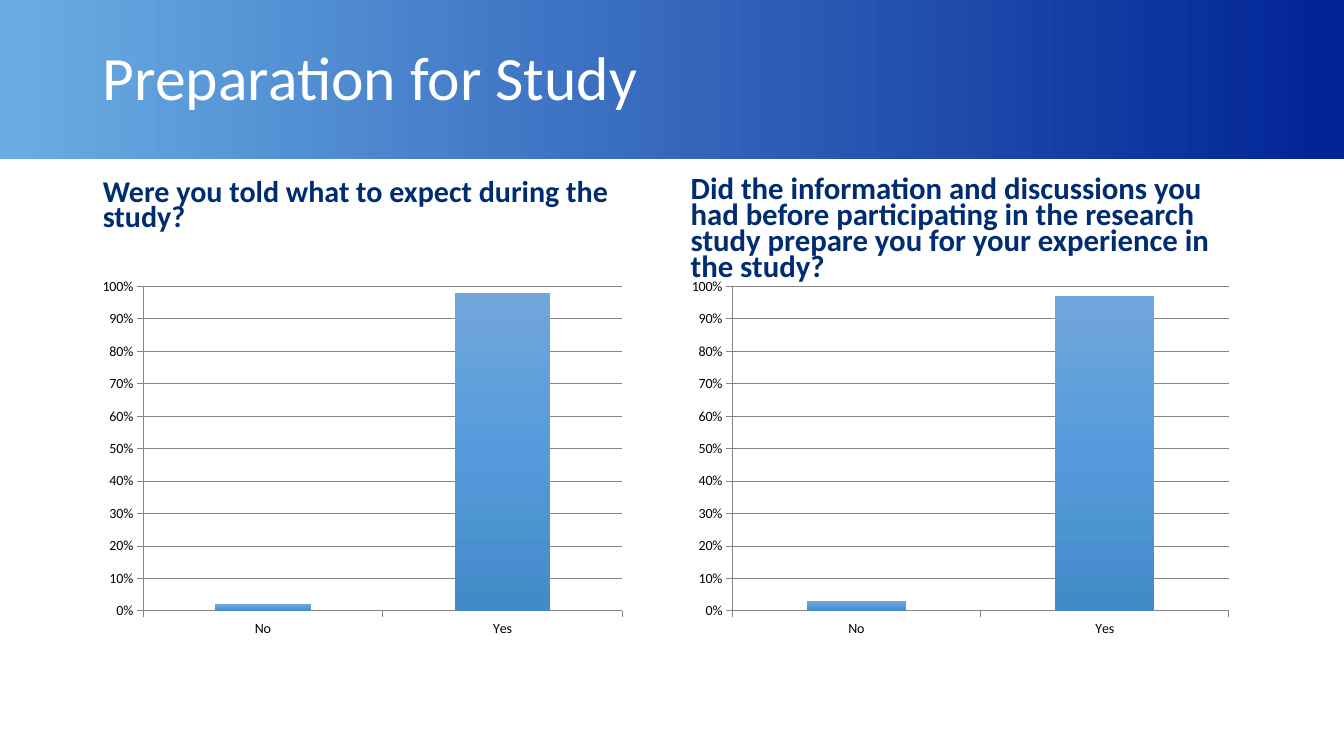
"""Build the Preparation for Study slide."""
from copy import deepcopy

from pptx import Presentation, util as u
from pptx.chart.data import CategoryChartData
from pptx.dml.color import RGBColor
from pptx.enum import chart as kinds, shapes, text

FONT = "Calibri"
WHITE = RGBColor(0xFF, 0xFF, 0xFF)
BLACK = RGBColor(0, 0, 0)
NAVY = RGBColor(0x00, 0x2D, 0x72)
GREY = RGBColor(0x86, 0x86, 0x86)
BANNER_COLOURS = [RGBColor(0x6A, 0xAD, 0xE4), RGBColor(0x00, 0x23, 0x95)]
BAR_COLOURS = [RGBColor(0x71, 0xA6, 0xDB), RGBColor(0x55, 0x9B, 0xDB),
               RGBColor(0x43, 0x8A, 0xC9)]


def place(item, left, top, width, height):
    """Move and size a shape, in inches."""
    item.left, item.top = u.Inches(left), u.Inches(top)
    item.width, item.height = u.Inches(width), u.Inches(height)


def paint_gradient(fill, colours, angle):
    """Fill with evenly spaced gradient colours."""
    fill.gradient()
    fill.gradient_angle = angle
    stop_list = fill._fill._gradFill.gsLst
    while len(stop_list) < len(colours):
        stop_list.append(deepcopy(stop_list[-1]))
    for index, (stop, colour) in enumerate(zip(fill.gradient_stops, colours)):
        stop.color.rgb = colour
        stop.position = index / (len(colours) - 1)


def add_banner(page):
    """Draw the gradient band behind the title."""
    banner = page.shapes.add_shape(shapes.MSO_SHAPE.RECTANGLE, 0, 0,
                                   u.Inches(13.33), u.Inches(1.58))
    banner.shadow.inherit = False
    banner.line.fill.background()
    paint_gradient(banner.fill, BANNER_COLOURS, 0)
    page.shapes._spTree.insert(2, banner._element)


def write_text(box, wording, size, colour, anchor, spacing, bold=False):
    """Write one left-aligned paragraph into a placeholder."""
    frame = box.text_frame
    frame.text = wording
    frame.word_wrap = True
    frame.auto_size = text.MSO_AUTO_SIZE.NONE
    frame.vertical_anchor = anchor
    para = frame.paragraphs[0]
    para.alignment = text.PP_ALIGN.LEFT
    para.line_spacing = spacing
    para.space_before = u.Pt(0)
    span = para.runs[0]
    span.font.name, span.font.size = FONT, u.Pt(size)
    span.font.bold = bold
    span.font.color.rgb = colour


def add_answer_chart(page, left, width, shares):
    """Add a column chart of the No and Yes shares."""
    data = CategoryChartData(number_format="0%")
    data.categories = ["No", "Yes"]
    data.add_series("Series 1", shares)
    chart = page.shapes.add_chart(
        kinds.XL_CHART_TYPE.COLUMN_CLUSTERED, u.Inches(left), u.Inches(2.69),
        u.Inches(width), u.Inches(3.7), data).chart
    chart.has_legend = False
    chart.has_title = False
    chart.font.name, chart.font.size = FONT, u.Pt(10)
    chart.font.color.rgb = BLACK
    plot = chart.plots[0]
    plot.gap_width = 150
    plot.vary_by_categories = False
    paint_gradient(plot.series[0].format.fill, BAR_COLOURS, 270)
    scale = chart.value_axis
    scale.minimum_scale, scale.maximum_scale, scale.major_unit = 0, 1, 0.1
    scale.tick_labels.number_format = "0%"
    scale.tick_labels.number_format_is_linked = False
    scale.has_major_gridlines = True
    for part in (scale, chart.category_axis, scale.major_gridlines):
        part.format.line.color.rgb = GREY
        part.format.line.width = u.Pt(0.75)
    for axis in (scale, chart.category_axis):
        axis.major_tick_mark = kinds.XL_TICK_MARK.OUTSIDE


def main():
    """Build and save the slide."""
    deck = Presentation()
    deck.slide_width, deck.slide_height = u.Inches(13.33), u.Inches(7.5)
    page = deck.slides.add_slide(deck.slide_layouts[4])
    title, left_body, left_object, right_body, right_object = page.placeholders
    for unused in (left_object, right_object):
        unused._element.getparent().remove(unused._element)
    add_banner(page)

    place(title, 0.92, 0.07, 11.5, 1.45)
    write_text(title, "Preparation for Study", 44, WHITE,
               text.MSO_ANCHOR.MIDDLE, 0.9)
    questions = [
        (left_body, (0.92, 1.61, 5.64, 0.75), 21.5,
         "Were you told what to expect during the study?"),
        (right_body, (6.75, 1.59, 5.67, 1.26), 22,
         "Did the information and discussions you had before participating "
         "in the research study prepare you for your experience in the study?"),
    ]
    for box, area, size, wording in questions:
        place(box, *area)
        write_text(box, wording, size, NAVY, text.MSO_ANCHOR.BOTTOM, 0.7, True)

    add_answer_chart(page, 0.91, 5.37, (0.02, 0.98))
    add_answer_chart(page, 6.75, 5.55, (0.03, 0.97))
    deck.save("out.pptx")


if __name__ == "__main__":
    main()
